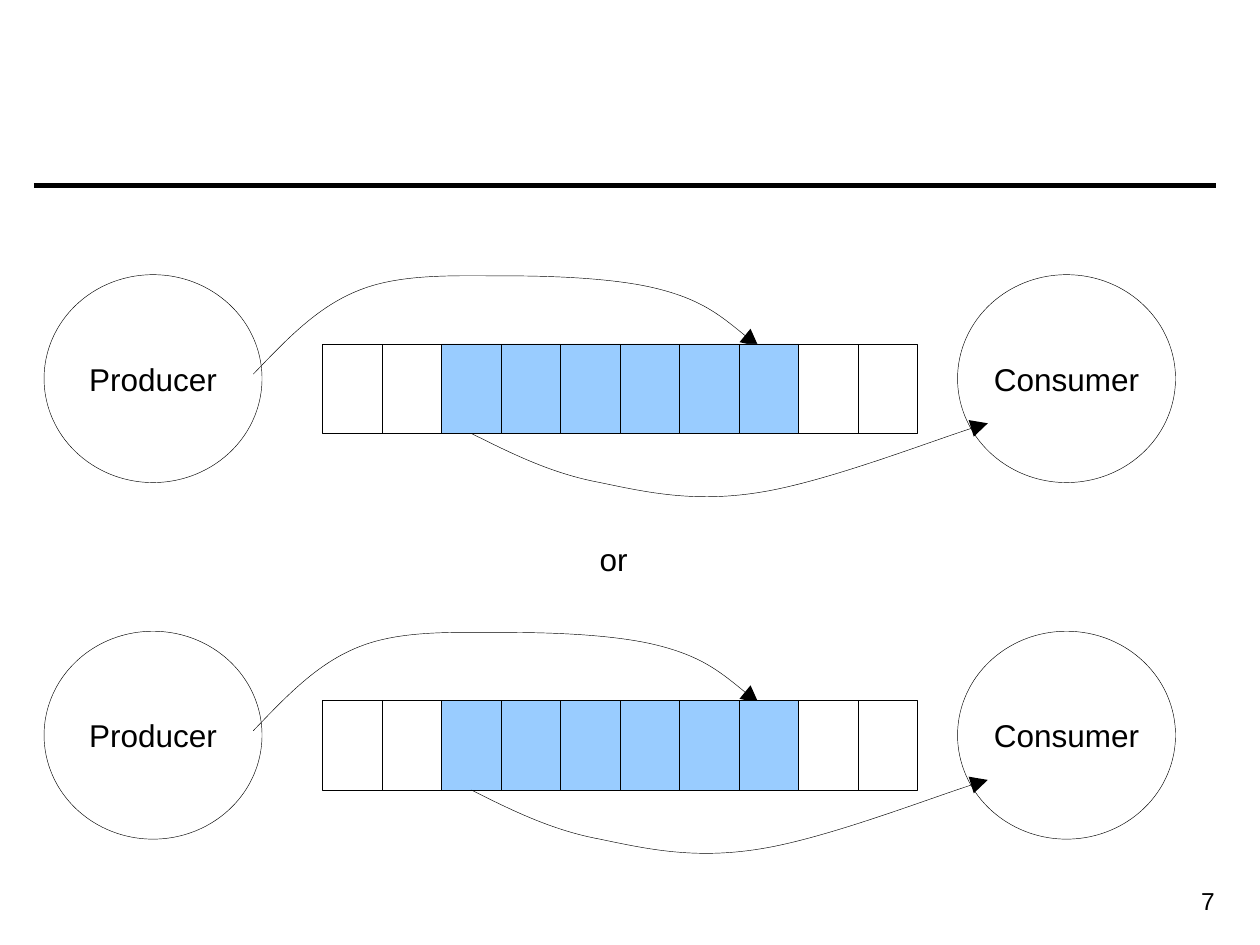
"""Build a slide showing a producer and a consumer sharing a bounded buffer."""
from dataclasses import dataclass

from lxml import etree
from pptx import Presentation
from pptx import util as u
from pptx.dml import color
from pptx.enum import shapes, text
from pptx.oxml import ns

COLORS = {"ink": "000000", "full": "99CCFF"}
FONT = "Arial"
THIN = 0.25
CELL_COUNT, FULL_CELLS = 10, range(2, 8)
CELL_LEFT, LAST_CELL_LEFT, CELL_TOP, CELL_HEIGHT = 2.56, 6.81, 0.55, 0.71
CELL_WIDTH = (LAST_CELL_LEFT - CELL_LEFT) / (CELL_COUNT - 1)
ROW_TOPS = (2.18, 5.01)


@dataclass(frozen=True)
class Actor:
    """A labelled circle, placed from the left edge of the slide."""

    label: str
    left: float
    width: float = 1.73
    height: float = 1.65


@dataclass(frozen=True)
class Curve:
    """A chain of cubic Bezier pieces, with heights relative to the row top."""

    points: tuple[tuple[float, float], ...]


ACTORS = (Actor("Producer", 0.35), Actor("Consumer", 7.6))
PUT = Curve(((2.01, 0.79), (2.27, 0.52), (2.52, 0.25), (2.86, 0.12),
             (3.19, -0.01), (3.62, 0.01), (4.02, 0.01),
             (4.41, 0.01), (4.92, 0.03), (5.25, 0.12),
             (5.59, 0.21), (5.8, 0.39), (6.02, 0.57)))
TAKE = Curve(((3.74, 1.26), (4.06, 1.42), (4.38, 1.58), (4.76, 1.65),
              (5.14, 1.73), (5.51, 1.81), (6.02, 1.73),
              (6.54, 1.65), (7.55, 1.26), (7.84, 1.18)))


def rgb(name: str) -> color.RGBColor:
    """Return the named colour."""
    return color.RGBColor.from_string(COLORS[name])


def write(frame, words: str, *, size: float, align=text.PP_ALIGN.LEFT,
          anchor=text.MSO_ANCHOR.TOP, wrap: bool = False) -> None:
    """Put one formatted paragraph into a text frame."""
    frame.word_wrap = wrap
    frame.vertical_anchor = anchor
    para = frame.paragraphs[0]
    para.alignment = align
    span = para.add_run()
    span.text = words
    span.font.name = FONT
    span.font.size = u.Pt(size)
    span.font.color.rgb = rgb("ink")


def style(shape, fill: str | None = None) -> None:
    """Give a shape a thin outline, no shadow and an optional fill."""
    shape.shadow.inherit = False
    shape.line.width = u.Pt(THIN)
    shape.line.color.rgb = rgb("ink")
    if fill:
        shape.fill.solid()
        shape.fill.fore_color.rgb = rgb(fill)
    else:
        shape.fill.background()


def draw_rule(page) -> None:
    """Draw the heavy line under the title area."""
    rule = page.shapes.add_connector(
        shapes.MSO_CONNECTOR.STRAIGHT,
        u.Inches(0.27), u.Inches(1.47), u.Inches(9.65), u.Inches(1.47))
    rule.line.width = u.Pt(3)
    rule.line.color.rgb = rgb("ink")
    etree.SubElement(rule.element.spPr, ns.qn("a:effectLst"))


def draw_label(page, words: str, left: float, top: float, width: float,
               height: float, **fmt) -> None:
    """Add a free-standing text box."""
    box = page.shapes.add_textbox(
        u.Inches(left), u.Inches(top), u.Inches(width), u.Inches(height))
    write(box.text_frame, words, **fmt)


def draw_buffer(page, top: float) -> None:
    """Draw the row of buffer cells, with the occupied ones filled."""
    for index in range(CELL_COUNT):
        cell = page.shapes.add_shape(
            shapes.MSO_SHAPE.RECTANGLE,
            u.Inches(CELL_LEFT + index * CELL_WIDTH), u.Inches(top + CELL_TOP),
            u.Inches(CELL_WIDTH), u.Inches(CELL_HEIGHT))
        style(cell, "full" if index in FULL_CELLS else None)


def draw_actor(page, actor: Actor, top: float) -> None:
    """Draw one circle with its name in the middle."""
    circle = page.shapes.add_shape(
        shapes.MSO_SHAPE.OVAL, u.Inches(actor.left), u.Inches(top),
        u.Inches(actor.width), u.Inches(actor.height))
    style(circle)
    write(circle.text_frame, actor.label, size=18,
          align=text.PP_ALIGN.CENTER, anchor=text.MSO_ANCHOR.MIDDLE)


def bend(arrow) -> None:
    """Turn each three straight segments of a freeform into one Bezier piece."""
    segments = list(arrow.element.iter(ns.qn("a:lnTo")))
    for start in range(0, len(segments), 3):
        piece = segments[start:start + 3]
        cubic = etree.Element(ns.qn("a:cubicBezTo"))
        piece[0].addprevious(cubic)
        for segment in piece:
            cubic.append(segment[0])
            segment.getparent().remove(segment)


def draw_curve(page, curve: Curve, top: float) -> None:
    """Draw a curved arrow."""
    places = [(u.Inches(x), u.Inches(top + y)) for x, y in curve.points]
    builder = page.shapes.build_freeform(*places[0])
    builder.add_line_segments(places[1:], close=False)
    arrow = builder.convert_to_shape()
    bend(arrow)
    style(arrow)
    outline = arrow.element.spPr.find(ns.qn("a:ln"))
    etree.SubElement(outline, ns.qn("a:tailEnd"),
                     type="triangle", w="lg", len="lg")


def main() -> None:
    """Build and save the deck."""
    deck = Presentation()
    deck.slide_width, deck.slide_height = u.Inches(10), u.Inches(7.5)
    page = deck.slides.add_slide(deck.slide_layouts[6])
    draw_rule(page)
    for top in ROW_TOPS:
        for actor in ACTORS:
            draw_actor(page, actor, top)
        draw_curve(page, PUT, top)
        draw_buffer(page, top)
        draw_curve(page, TAKE, top)
    draw_label(page, "or", 4.66, 4.24, 0.42, 0.4, size=18)
    draw_label(page, "7", 8.7, 6.98, 1.04, 0.34, size=14,
               align=text.PP_ALIGN.RIGHT, wrap=True)
    deck.save("out.pptx")


if __name__ == "__main__":
    main()
